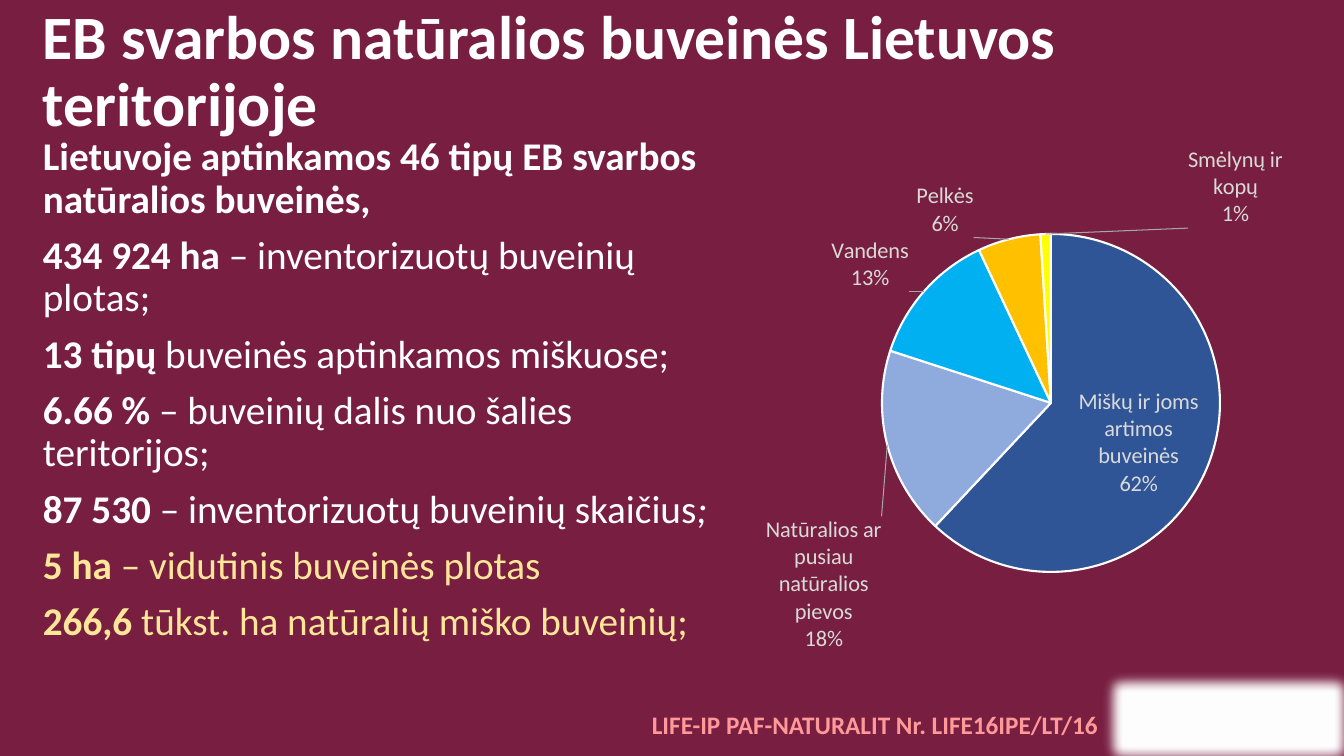
from lxml.etree import SubElement
from pptx import Presentation
from pptx.chart.data import CategoryChartData
from pptx.dml.color import RGBColor
from pptx.enum.chart import XL_CHART_TYPE as ChartType
from pptx.enum.shapes import MSO_SHAPE as Preset
from pptx.enum.text import MSO_ANCHOR as Anchor
from pptx.oxml import parse_xml
from pptx.oxml.ns import nsdecls, qn
from pptx.util import Emu, Pt

EMU_PER_PX = 914400 / 100.8
WHITE, CREAM, PINK = "FFFFFF", "FFE699", "FF9999"

FACTS = [
    (WHITE, "Lietuvoje aptinkamos 46 tipų EB svarbos natūralios buveinės,", "", ""),
    (WHITE, "434 924 ha ", "– inventorizuotų buveinių plotas;", ""),
    (WHITE, "13 tipų ", "buveinės aptinkamos miškuose;", ""),
    (WHITE, "6.66 % ", "– buveinių dalis nuo šalies teritorijos;", ""),
    (WHITE, "87 530 ", "– inventorizuotų buveinių skaičius", ";"),
    (CREAM, "5 ha ", "– vidutinis buveinės plotas", ""),
    (CREAM, "266,6 ", "tūkst. ha natūralių miško buveinių;", ""),
]

HABITATS = [
    ("Miškų ir joms artimos buveinės", 62, "2F5597", (-135, -79), (85, 137)),
    ("Natūralios ar pusiau natūralios pievos", 18, "8FAADC", (0, 70), (100, 137)),
    ("Vandens", 13, "00B0F0", (-11, 5), (84, 55)),
    ("Pelkės", 6, "FFC000", (-34, 4), (64, 55)),
    ("Smėlynų ir kopų", 1, "FFFF00", (190, 0), (100, 82)),
]


def px(length):
    return Emu(round(length * EMU_PER_PX))


def color(hex_code):
    return RGBColor.from_string(hex_code)


class Slide:
    font = "Calibri"
    label_color = "D9D9D9"
    leader_color = "A6A6A6"
    label_flags = (
        '<c:dLblPos val="bestFit"/><c:showLegendKey val="0"/><c:showVal val="0"/>'
        '<c:showCatName val="1"/><c:showSerName val="0"/><c:showPercent val="1"/>'
        '<c:showBubbleSize val="0"/><c:separator>\n</c:separator>'
    )

    def __init__(self, deck, background):
        self.page = deck.slides.add_slide(deck.slide_layouts[6])
        self.page.background.fill.solid()
        self.page.background.fill.fore_color.rgb = color(background)

    def soft_panel(self, x, y, width, height, fill):
        box = self.page.shapes.add_shape(
            Preset.RECTANGLE, px(x), px(y), px(width), px(height))
        box.shadow.inherit = False
        box.fill.solid()
        box.fill.fore_color.rgb = color(fill)
        box.line.color.rgb = color(fill)
        box.line.width = Pt(1)
        effects = box._element.spPr.find(qn("a:effectLst"))
        SubElement(effects, qn("a:softEdge"), rad=str(Pt(10)))

    def text(self, x, y, width, height, rows, size, wrap=True,
             anchor=Anchor.TOP, line_spacing=0.9):
        box = self.page.shapes.add_textbox(px(x), px(y), px(width), px(height))
        frame = box.text_frame
        frame.word_wrap = wrap
        frame.vertical_anchor = anchor
        for index, (ink, strong, plain, slanted) in enumerate(rows):
            para = frame.add_paragraph() if index else frame.paragraphs[0]
            para.line_spacing = line_spacing
            para.space_before = Pt(10 if index else 0)
            for place, words in enumerate((strong, plain, slanted)):
                if words:
                    span = para.add_run()
                    span.text = words
                    span.font.name = self.font
                    span.font.size = Pt(size)
                    span.font.bold = place == 0
                    span.font.italic = place == 2
                    span.font.color.rgb = color(ink)

    def pie(self, x, y, width, height, slices, plot):
        names, values, fills, moves, sizes = zip(*slices)
        data = CategoryChartData()
        data.categories = names
        data.add_series("Series 1", values)
        chart = self.page.shapes.add_chart(
            ChartType.PIE, px(x), px(y), px(width), px(height), data).chart
        chart.has_title = False
        chart.has_legend = False
        chart.font.name = self.font
        chart.font.size = Pt(16)
        chart.font.color.rgb = color(self.label_color)
        chart.plots[0].vary_by_categories = True
        series = chart.plots[0].series[0]
        for index, fill in enumerate(fills):
            wedge = series.points[index].format
            wedge.fill.solid()
            wedge.fill.fore_color.rgb = color(fill)
            wedge.line.color.rgb = color(WHITE)
            wedge.line.width = Pt(1.5)
        self.place_plot(chart, plot, width, height)
        self.place_labels(series, moves, sizes, width, height)

    def place_plot(self, chart, plot, width, height):
        area = chart._chartSpace.find(".//" + qn("c:plotArea"))
        for layout in area.findall(qn("c:layout")):
            area.remove(layout)
        left, top, side = plot
        area.insert(0, parse_xml(
            f'<c:layout {nsdecls("c")}><c:manualLayout>'
            '<c:layoutTarget val="inner"/><c:xMode val="edge"/><c:yMode val="edge"/>'
            f'<c:x val="{left / width}"/><c:y val="{top / height}"/>'
            f'<c:w val="{side / width}"/><c:h val="{side / height}"/>'
            '</c:manualLayout></c:layout>'))

    def place_labels(self, series, moves, sizes, width, height):
        labels = "".join(
            f'<c:dLbl><c:idx val="{index}"/><c:layout><c:manualLayout>'
            f'<c:x val="{right / width}"/><c:y val="{down / height}"/>'
            f'</c:manualLayout></c:layout>{self.label_flags}'
            '<c:extLst><c:ext uri="{CE6537A1-D6FC-4f65-9D91-7224C49458BB}">'
            '<c15:layout><c:manualLayout>'
            f'<c:w val="{wide / width}"/><c:h val="{tall / height}"/>'
            '</c:manualLayout></c15:layout></c:ext></c:extLst></c:dLbl>'
            for index, ((right, down), (wide, tall)) in enumerate(zip(moves, sizes)))
        series._element.find(qn("c:cat")).addprevious(parse_xml(
            f'<c:dLbls {nsdecls("c", "a")} '
            'xmlns:c15="http://schemas.microsoft.com/office/drawing/2012/chart">'
            f'{labels}<c:numFmt formatCode="0%" sourceLinked="0"/>'
            f'{self.label_flags}<c:showLeaderLines val="1"/><c:leaderLines><c:spPr>'
            f'<a:ln w="9525"><a:solidFill><a:srgbClr val="{self.leader_color}"/>'
            '</a:solidFill></a:ln></c:spPr></c:leaderLines></c:dLbls>'))


def main():
    deck = Presentation()
    deck.slide_width, deck.slide_height = px(1344), px(756)
    slide = Slide(deck, "781E40")
    slide.soft_panel(1096, 665, 265, 108, WHITE)
    slide.text(642, 704, 471, 40,
               [(PINK, "LIFE-IP PAF-NATURALIT Nr. LIFE16IPE/LT/16", "", "")],
               18, wrap=False, line_spacing=1.0)
    slide.text(33, 0, 1310, 146,
               [(WHITE, "EB svarbos natūralios buveinės Lietuvos teritorijoje", "", "")],
               44, anchor=Anchor.MIDDLE)
    slide.text(33, 132, 707, 549, FACTS, 28)
    slide.pie(740, 132, 604, 522, HABITATS, (142, 102, 338))
    deck.save("out.pptx")


if __name__ == "__main__":
    main()
